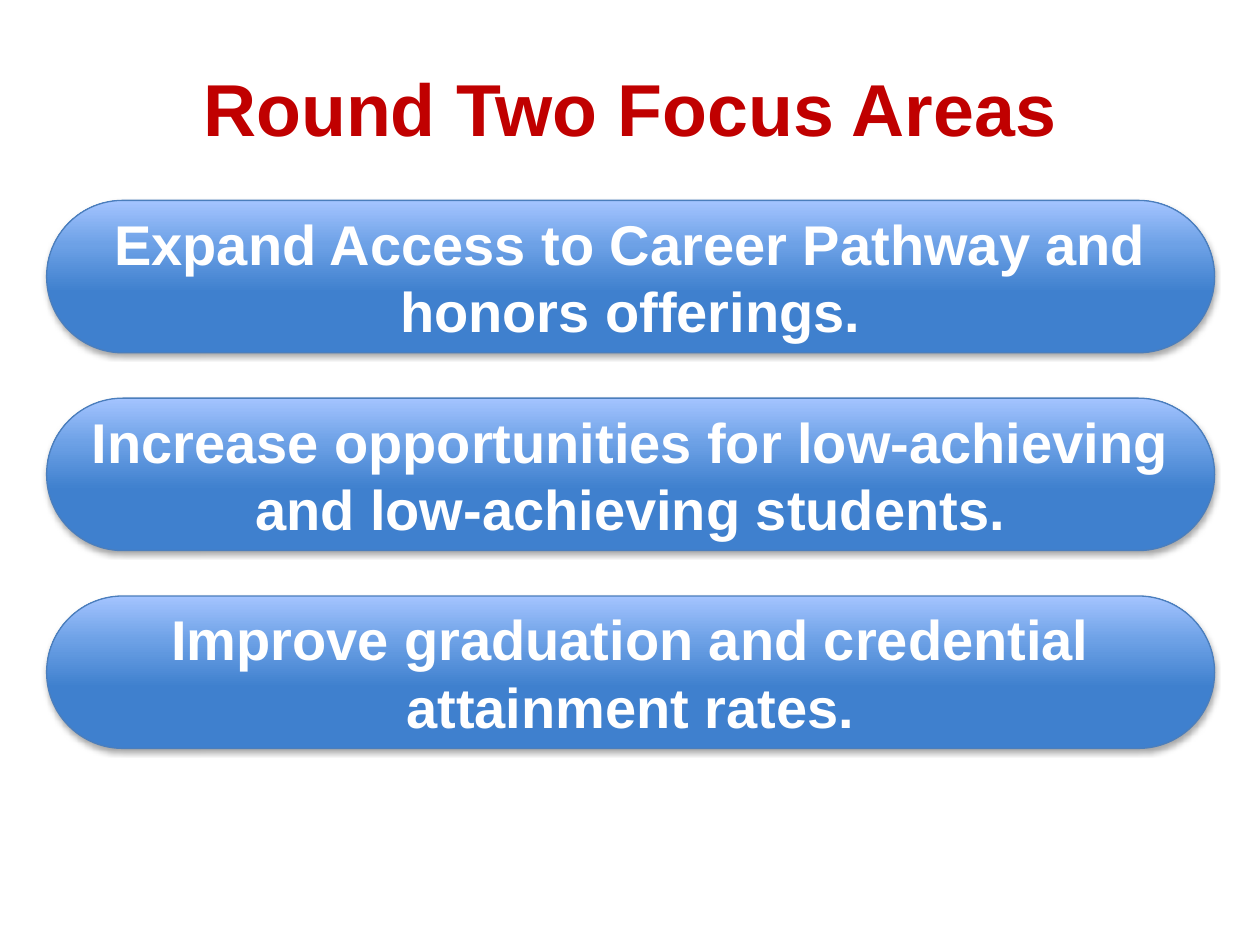
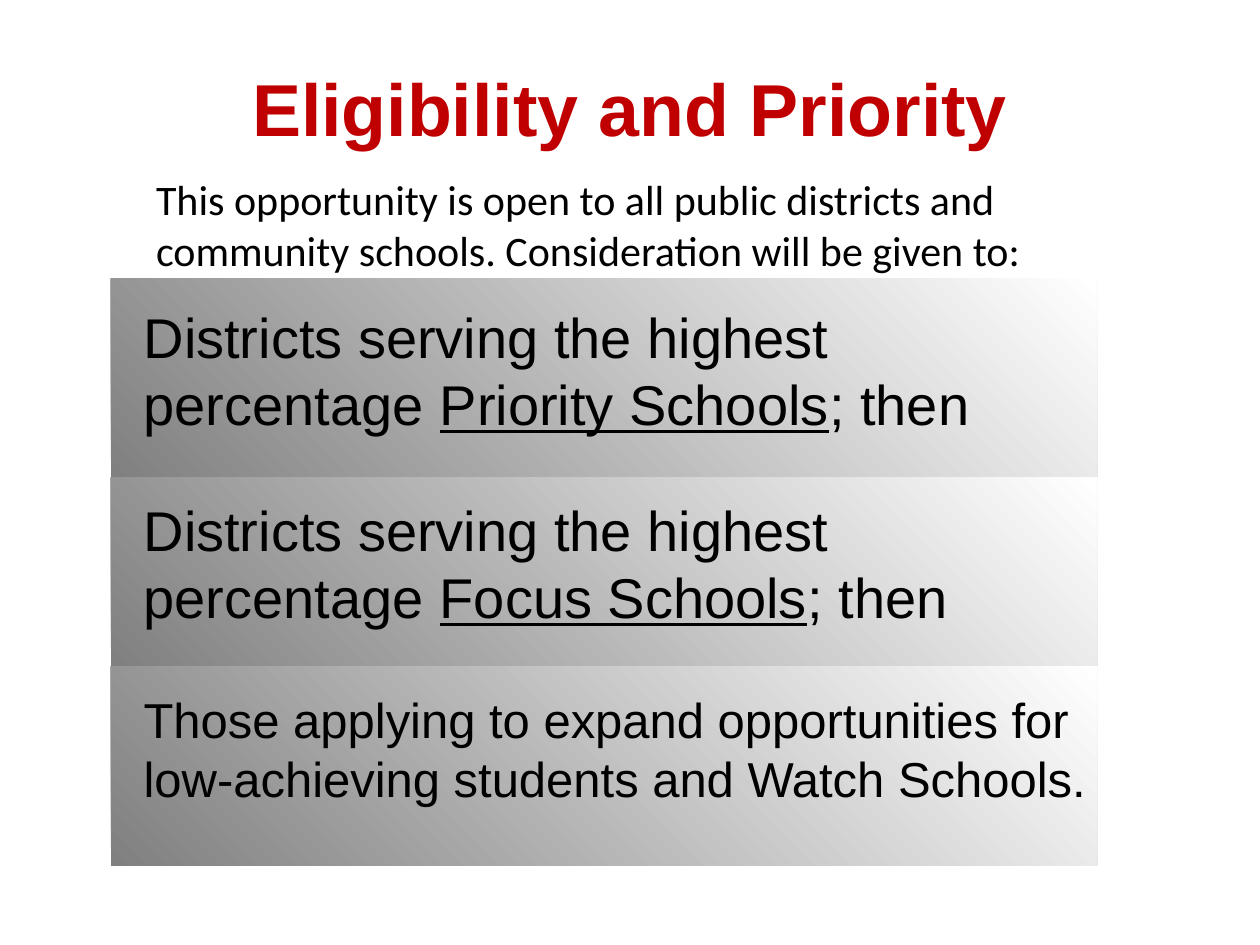
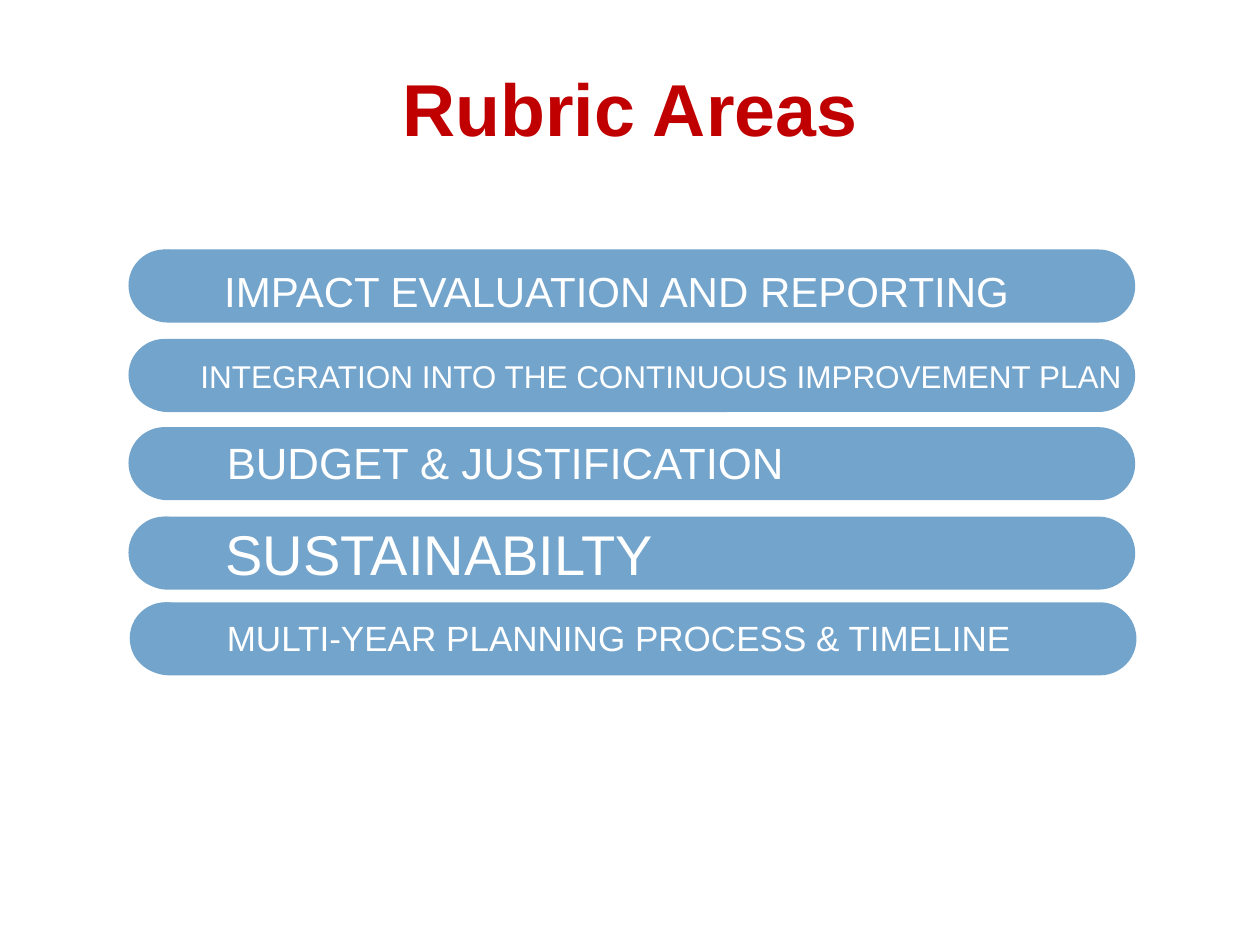
import dataclasses

import lxml.etree
import pptx
import pptx.dml.color
import pptx.enum.shapes
import pptx.enum.text
import pptx.oxml.ns
import pptx.util

Inches = pptx.util.Inches
Align = pptx.enum.text.PP_ALIGN
Anchor = pptx.enum.text.MSO_ANCHOR
Preset = pptx.enum.shapes.MSO_SHAPE
qn = pptx.oxml.ns.qn


@dataclasses.dataclass(frozen=True)
class Theme:
    """Colours, fonts and type sizes shared by the slides."""

    title: str = "C00000"
    ink: str = "000000"
    light: str = "FFFFFF"
    rubric: str = "73A4CC"
    focus_line: str = "4B7EBC"
    focus_stops: tuple = ((40, "3F80CE"), (71, "6DA1E6"), (100, "A4C4FF"))
    tier_stops: tuple = ((0, "808080"), (100, "FFFFFF"))
    font: str = "Arial"
    intro_font: str = "Calibri"
    title_size: int = 42
    large: int = 32
    medium: int = 28
    intro_size: int = 24


THEME = Theme()


def rgb(value):
    """Return a colour from its hex string."""
    return pptx.dml.color.RGBColor.from_string(value)


def write(frame, *runs, size=THEME.large, color=THEME.ink, font=THEME.font,
          bold=False, align=Align.LEFT, anchor=Anchor.TOP, inset=(0, 0)):
    """Write runs, given as text or as (text, underlined), into a text frame."""
    frame.word_wrap = True
    frame.auto_size = pptx.enum.text.MSO_AUTO_SIZE.NONE
    frame.vertical_anchor = anchor
    frame.margin_left = frame.margin_right = Inches(inset[0])
    frame.margin_top = frame.margin_bottom = Inches(inset[1])
    paragraph = frame.paragraphs[0]
    paragraph.alignment = align
    for item in runs:
        text, underlined = (item, False) if isinstance(item, str) else item
        run = paragraph.add_run()
        run.text = text
        run.font.name = font
        run.font.size = pptx.util.Pt(size)
        run.font.bold = bold
        run.font.underline = underlined
        run.font.color.rgb = rgb(color)


def add_text(slide, box, *runs, **style):
    """Add a text box at box, in inches, and write into it."""
    write(slide.shapes.add_textbox(*map(Inches, box)).text_frame, *runs, **style)


def add_panel(slide, preset, box, fill=None):
    """Add a preset shape without line or shadow, with full rounding if rounded."""
    panel = slide.shapes.add_shape(preset, *map(Inches, box))
    panel.shadow.inherit = False
    panel.line.fill.background()
    if preset == Preset.ROUNDED_RECTANGLE:
        panel.adjustments[0] = 0.5
    if fill:
        panel.fill.solid()
        panel.fill.fore_color.rgb = rgb(fill)
    return panel


def fill_gradient(panel, stops, angle):
    """Fill a shape with a linear gradient of (percent, colour) stops."""
    panel.fill.gradient()
    panel.fill.gradient_angle = angle
    stop_list = panel._element.spPr.find(qn("a:gradFill")).find(qn("a:gsLst"))
    for stop in list(stop_list):
        stop_list.remove(stop)
    for percent, color in stops:
        stop = lxml.etree.SubElement(stop_list, qn("a:gs"), pos=str(percent * 1000))
        lxml.etree.SubElement(stop, qn("a:srgbClr"), val=color)


def drop_shadow(panel):
    """Give a shape a soft shadow straight below it."""
    effects = panel._element.spPr.find(qn("a:effectLst"))
    shadow = lxml.etree.SubElement(
        effects, qn("a:outerShdw"), blurRad=str(pptx.util.Pt(3.1)),
        dist=str(pptx.util.Pt(1.8)), dir="5400000", rotWithShape="0")
    color = lxml.etree.SubElement(shadow, qn("a:srgbClr"), val=THEME.ink)
    lxml.etree.SubElement(color, qn("a:alpha"), val="35000")


def add_titled_slide(deck, title):
    """Add a title-only slide and format its title."""
    slide = deck.slides.add_slide(deck.slide_layouts[5])
    heading = slide.shapes.title
    heading.left, heading.top, heading.width, heading.height = map(
        Inches, (0.5, 0.5, 9, 0.71))
    write(heading.text_frame, title, size=THEME.title_size, color=THEME.title,
          bold=True, align=Align.CENTER)
    return slide


def add_focus_areas(slide, box, areas):
    """Stack equally spaced glossy pills, one for each focus area."""
    left, top, width, height = box
    pill_height = 1.21
    pitch = (height - pill_height) / (len(areas) - 1)
    for index, area in enumerate(areas):
        pill = add_panel(slide, Preset.ROUNDED_RECTANGLE,
                         (left, top + index * pitch, width, pill_height))
        fill_gradient(pill, THEME.focus_stops, 90)
        pill.line.color.rgb = rgb(THEME.focus_line)
        pill.line.width = pptx.util.Pt(0.75)
        drop_shadow(pill)
        write(pill.text_frame, area, color=THEME.light, bold=True,
              align=Align.CENTER, anchor=Anchor.MIDDLE, inset=(0.1, 0.05))


def add_priority_tiers(slide, box, tiers):
    """Stack shaded bands, each of (height, text offset, size, runs)."""
    left, top, width = box
    indent = 0.26
    for height, offset, size, runs in tiers:
        band = add_panel(slide, Preset.RECTANGLE, (left, top, width, height))
        fill_gradient(band, THEME.tier_stops, 45)
        add_text(slide, (left + indent, top + offset, width - indent, height - offset),
                 *runs, size=size)
        top += height


def add_rubric_row(slide, box, area, size, indent, offset):
    """Add a rounded bar with its end cap and label."""
    left, top, width, height = box
    cap = 0.57
    add_panel(slide, Preset.ROUNDED_RECTANGLE, box, THEME.rubric)
    add_panel(slide, Preset.OVAL, (left - 0.02, top, cap, cap), THEME.rubric)
    add_text(slide, (left + indent, top + offset, width - indent, height - offset),
             area, size=size, color=THEME.light)


def main():
    """Build the three slides and save the deck."""
    deck = pptx.Presentation()
    deck.slide_width, deck.slide_height = Inches(10), Inches(7.5)

    focus = add_titled_slide(deck, "Round Two Focus Areas")
    add_focus_areas(focus, (0.37, 1.59, 9.27, 4.35), (
        "Expand Access to Career Pathway and honors offerings.",
        "Increase opportunities for low-achieving and low-achieving students.",
        "Improve graduation and credential attainment rates."))

    eligibility = add_titled_slide(deck, "Eligibility and Priority")
    serving = "Districts serving the highest percentage "
    add_priority_tiers(eligibility, (0.88, 2.21, 7.83), (
        (1.58, 0.19, THEME.large, (serving, ("Priority Schools", True), "; then")),
        (1.5, 0.14, THEME.large, (serving, ("Focus Schools", True), "; then")),
        (1.58, 0.18, THEME.medium, (
            "Those applying to expand opportunities for low-achieving students "
            "and Watch Schools.",))))
    add_text(eligibility, (1.14, 1.33, 7.57, 0.91),
             "This opportunity is open to all public districts and community schools. "
             "Consideration will be given to:",
             size=THEME.intro_size, font=THEME.intro_font, inset=(0.1, 0.05))

    rubric = add_titled_slide(deck, "Rubric Areas")
    rows = (
        (1.04, 1.98, "IMPACT EVALUATION AND REPORTING", 24, 0.74, 0.13),
        (1.04, 2.69, "INTEGRATION INTO THE CONTINUOUS IMPROVEMENT PLAN", 18, 0.55, 0.14),
        (1.04, 3.39, "BUDGET & JUSTIFICATION", 25, 0.76, 0.07),
        (1.04, 4.1, "SUSTAINABILTY", 32, 0.75, 0.02),
        (1.05, 4.78, "MULTI-YEAR PLANNING PROCESS & TIMELINE", 20, 0.75, 0.11))
    for left, top, *label in rows:
        add_rubric_row(rubric, (left, top, 7.97, 0.58), *label)

    deck.save("out.pptx")


if __name__ == "__main__":
    main()
